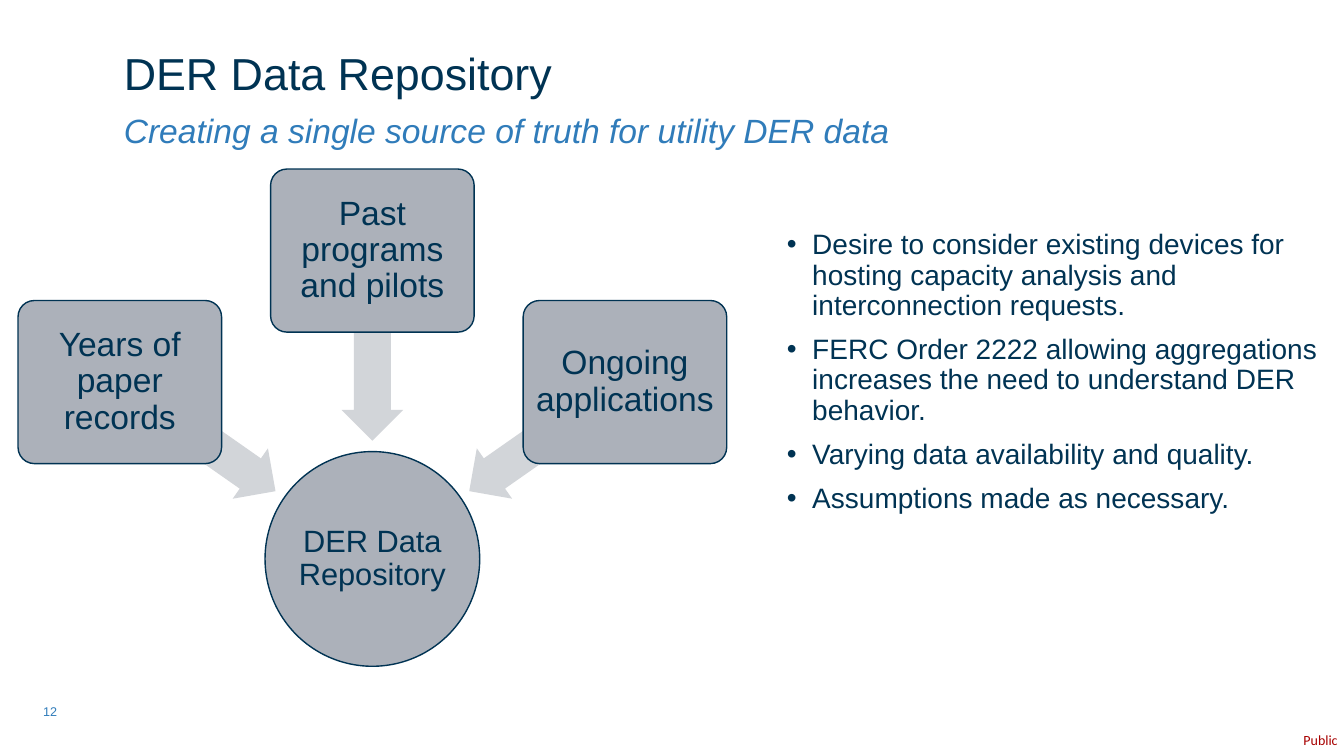
from math import cos, radians, sin

from lxml import etree
from pptx import Presentation
from pptx.dml.color import RGBColor
from pptx.enum.shapes import MSO_SHAPE
from pptx.enum.text import MSO_ANCHOR, PP_ALIGN
from pptx.oxml.ns import qn
from pptx.util import Cm, Pt

ELLIPSE = MSO_SHAPE.OVAL
ROUNDED = MSO_SHAPE.ROUNDED_RECTANGLE
LEFT_ARROW = MSO_SHAPE.LEFT_ARROW
TOP, MIDDLE = MSO_ANCHOR.TOP, MSO_ANCHOR.MIDDLE
CENTER = PP_ALIGN.CENTER

COLORS = {"navy": "003353", "blue": "307CBA", "red": "A80000",
          "node": "ACB1BA", "arrow": "D2D5D9"}
SOURCES = [("Years of paper records", 35),
           ("Past programs and pilots", 90),
           ("Ongoing applications", 145)]
POINTS = [
    "Desire to consider existing devices for hosting capacity analysis and interconnection requests.",
    "FERC Order 2222 allowing aggregations increases the need to understand DER behavior.",
    "Varying data availability and quality.",
    "Assumptions made as necessary.",
]


def rgb(name):
    """Return the named colour."""
    return RGBColor.from_string(COLORS[name])


def set_font(p, size, color, name="Arial", italic=False):
    """Format every run of a paragraph."""
    for r in p.runs:
        r.font.name, r.font.size, r.font.italic = name, Pt(size), italic
        r.font.color.rgb = rgb(color)


def set_margins(tf, x, y):
    """Set equal side margins and equal top and bottom margins in cm."""
    tf.margin_left = tf.margin_right = Cm(x)
    tf.margin_top = tf.margin_bottom = Cm(y)


def add_text(s, box, text, size, color, anchor=TOP, spacing=1.0, **font):
    """Add a one-paragraph text box and return its frame."""
    tf = s.shapes.add_textbox(*map(Cm, box)).text_frame
    tf.word_wrap = True
    tf.vertical_anchor = anchor
    tf.text = text
    tf.paragraphs[0].line_spacing = spacing
    set_font(tf.paragraphs[0], size, color, **font)
    return tf


def add_centered(s, kind, x, y, w, h, fill):
    """Add a filled shape without outline around a centre point."""
    sp = s.shapes.add_shape(kind, Cm(x - w / 2), Cm(y - h / 2), Cm(w), Cm(h))
    sp.shadow.inherit = False
    sp.fill.solid()
    sp.fill.fore_color.rgb = rgb(fill)
    sp.line.fill.background()
    return sp


def add_node(s, kind, x, y, w, h, text, size, margin):
    """Add an outlined node with centred text."""
    sp = add_centered(s, kind, x, y, w, h, "node")
    sp.line.color.rgb = rgb("navy")
    sp.line.width = Pt(1)
    tf = sp.text_frame
    tf.word_wrap = True
    tf.vertical_anchor = MIDDLE
    set_margins(tf, margin, margin)
    tf.text = text
    p = tf.paragraphs[0]
    p.alignment = CENTER
    p.line_spacing = 0.9
    set_font(p, size, "navy")
    return sp


def add_heading(s, left, top, width):
    """Add the title with its subtitle below."""
    add_text(s, (left, top, width, 1.5), "DER Data Repository", 32, "navy", spacing=0.9)
    add_text(s, (left, top + 1.6, width, 1.4),
             "Creating a single source of truth for utility DER data",
             24, "blue", spacing=0.9, italic=True)


def add_diagram(s, left, top, width, height):
    """Add the repository circle and the sources that point to it."""
    hub = 5.41
    x, y = left + width / 2, top + height - hub / 2
    add_node(s, ELLIPSE, x, y, hub, hub, "DER Data Repository", 22, 0.05)
    for text, angle in SOURCES:
        dx, dy = cos(radians(angle)), sin(radians(angle))
        arrow = add_centered(s, LEFT_ARROW, x - 5.37 * dx, y - 5.37 * dy, 4.78, 1.55, "arrow")
        arrow.adjustments[0], arrow.adjustments[1] = 0.6, 0.5
        arrow.rotation = angle + 180
        box = add_node(s, ROUNDED, x - 7.77 * dx, y - 7.77 * dy, 5.13, 4.11, text, 24, 0.12)
        box.adjustments[0] = 0.1


def add_bullets(s, left, top, width, height):
    """Add the bulleted list of points."""
    tf = s.shapes.add_textbox(Cm(left), Cm(top), Cm(width), Cm(height)).text_frame
    tf.word_wrap = True
    tf.text = "\n".join(POINTS)
    for i, p in enumerate(tf.paragraphs):
        pPr = p._p.get_or_add_pPr()
        pPr.set("marL", str(Cm(0.64)))
        pPr.set("indent", str(Cm(-0.64)))
        etree.SubElement(pPr, qn("a:buFont")).set("typeface", "Arial")
        etree.SubElement(pPr, qn("a:buChar")).set("char", "•")
        p.line_spacing = 0.9
        p.space_before = Pt(10 if i else 0)
        set_font(p, 20, "navy")


def add_footer(s, width, height):
    """Add the page number and the classification label."""
    add_text(s, (0.84, height - 1.63, 1.27, 1.02), "12", 9, "blue", anchor=MIDDLE)
    tf = add_text(s, (width - 1.02, height - 0.61, 1.02, 0.43), "Public", 10, "red", name="Calibri")
    tf.word_wrap = False
    set_margins(tf, 0, 0)


def main():
    """Build the slide and save it."""
    prs = Presentation()
    prs.slide_width, prs.slide_height = Cm(33.87), Cm(19.05)
    s = prs.slides.add_slide(prs.slide_layouts[6])
    add_heading(s, 2.87, 1.17, 29.69)
    add_bullets(s, 19.58, 5.69, 14.05, 7.67)
    add_diagram(s, 0.46, 4.27, 17.85, 12.52)
    add_footer(s, 33.87, 19.05)
    prs.save("out.pptx")


if __name__ == "__main__":
    main()
